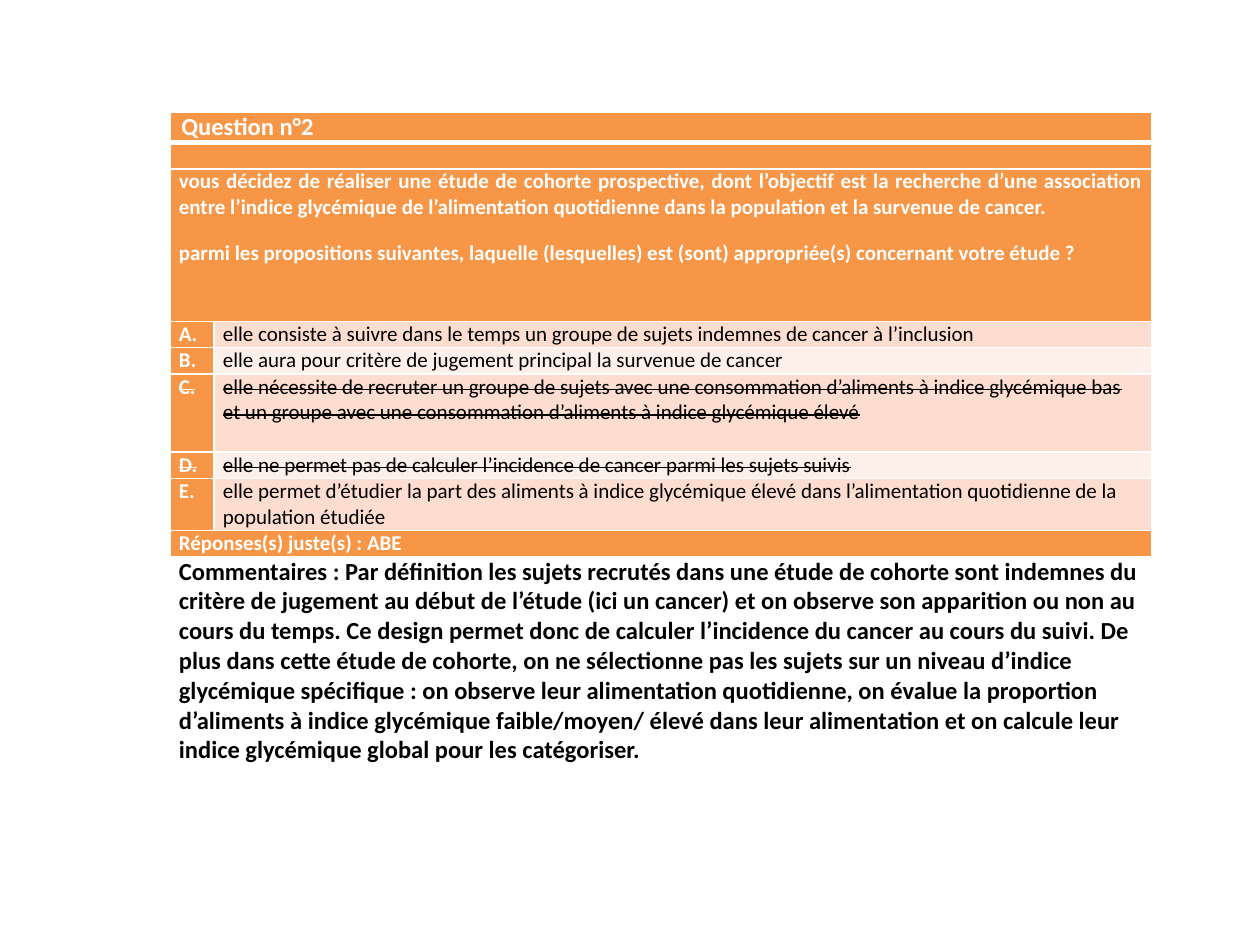
from lxml import etree
from pptx import Presentation
from pptx.dml.color import RGBColor
from pptx.enum.text import PP_ALIGN
from pptx.oxml.ns import qn
from pptx.util import Inches, Pt

LEFT, JUSTIFY = PP_ALIGN.LEFT, PP_ALIGN.JUSTIFY
WHITE = RGBColor(0xFF, 0xFF, 0xFF)
BLACK = RGBColor(0, 0, 0)
ORANGE = RGBColor(0xF7, 0x96, 0x46)
BANDS = RGBColor(0xFC, 0xDD, 0xCF), RGBColor(0xFD, 0xEF, 0xE9)

COLUMNS = [0.35, 7.44]
ROWS = [0.24, 0.21, 1.21, 0.21, 0.21, 0.62, 0.21, 0.41, 0.21, 1.24]
QUESTION = [
    "vous décidez de réaliser une étude de cohorte prospective, dont l’objectif est la recherche "
    "d’une association entre l’indice glycémique de l’alimentation quotidienne dans la population "
    "et la survenue de cancer.",
    "parmi les propositions suivantes, laquelle (lesquelles) est (sont) appropriée(s) concernant "
    "votre étude ?",
]
ANSWERS = [
    ("A.", "elle consiste à suivre dans le temps un groupe de sujets indemnes de cancer à "
     "l’inclusion", True),
    ("B.", "elle aura pour critère de jugement principal la survenue de cancer", True),
    ("C.", "elle nécessite de recruter un groupe de sujets avec une consommation d’aliments à "
     "indice glycémique bas et un groupe avec une consommation d’aliments à indice glycémique "
     "élevé", False),
    ("D.", "elle ne permet pas de calculer l’incidence de cancer parmi les sujets suivis", False),
    ("E.", "elle permet d’étudier la part des aliments à indice glycémique élevé dans "
     "l’alimentation quotidienne de la population étudiée", True),
]
COMMENT = (
    "Commentaires : Par définition les sujets recrutés dans une étude de cohorte sont indemnes du "
    "critère de jugement au début de l’étude (ici un cancer) et on observe son apparition ou non "
    "au cours du temps. Ce design permet donc de calculer l’incidence du cancer au cours du suivi. "
    "De plus dans cette étude de cohorte, on ne sélectionne pas les sujets sur un niveau d’indice "
    "glycémique spécifique : on observe leur alimentation quotidienne, on évalue la proportion "
    "d’aliments à indice glycémique faible/moyen/ élevé dans leur alimentation et on calcule leur "
    "indice glycémique global pour les catégoriser."
)


class Deck:
    font = "Calibri"
    margins = {"margin_left": Inches(0.07), "margin_right": Inches(0.07),
               "margin_top": 0, "margin_bottom": 0}

    def __init__(self, width, height):
        self.prs = Presentation()
        self.prs.slide_width, self.prs.slide_height = Inches(width), Inches(height)
        self.s = self.prs.slides.add_slide(self.prs.slide_layouts[6])

    def table(self, left, top, columns, rows):
        shape = self.s.shapes.add_table(len(rows), len(columns), Inches(left), Inches(top),
                                        Inches(sum(columns)), Inches(sum(rows)))
        tbl = shape.table
        tbl.first_row = tbl.horz_banding = False
        for column, width in zip(tbl.columns, columns):
            column.width = Inches(width)
        for row, height in zip(tbl.rows, rows):
            row.height = Inches(height)
        return tbl

    def border(self, cell, **widths):
        tcPr = cell._tc.get_or_add_tcPr()
        for side in "LRTB":
            ln = etree.SubElement(tcPr, qn(f"a:ln{side}"), w=str(Pt(widths.get(side, 1))))
            fill = etree.SubElement(ln, qn("a:solidFill"))
            etree.SubElement(fill, qn("a:srgbClr"), val=str(WHITE))

    def cell(self, cell, texts, fill=ORANGE, color=WHITE, size=12, bold=True,
             strike=False, align=LEFT):
        for name, value in self.margins.items():
            setattr(cell, name, value)
        if fill is None:
            cell.fill.background()
        else:
            cell.fill.solid()
            cell.fill.fore_color.rgb = fill
        tf = cell.text_frame
        if not texts:
            etree.SubElement(tf.paragraphs[0]._p, qn("a:endParaRPr"), sz=str(size * 100))
        for i, text in enumerate(texts):
            p = tf.add_paragraph() if i else tf.paragraphs[0]
            p.alignment = align
            if i:
                p.space_before = Pt(12)
            r = p.add_run()
            r.text = text
            font = {"name": self.font, "size": Pt(size), "bold": bold}
            for name, value in font.items():
                setattr(r.font, name, value)
            r.font.color.rgb = color
            if strike:
                r._r.get_or_add_rPr().set("strike", "sngStrike")

    def full_row(self, tbl, row, texts, **style):
        first = tbl.cell(row, 0)
        first.merge(tbl.cell(row, 1))
        self.cell(first, texts, **style)


def main():
    deck = Deck(10, 7.5)
    tbl = deck.table(1.35, 0.89, COLUMNS, ROWS)
    for i in range(len(ROWS)):
        for j in range(len(COLUMNS)):
            deck.border(tbl.cell(i, j), T=3 if i == 1 else 1, B=3 if i == 0 else 1)

    deck.full_row(tbl, 0, ["Question n°2"], size=14, align=JUSTIFY)
    tbl.cell(0, 0).margin_left = Inches(0.09)
    deck.full_row(tbl, 1, [])
    deck.full_row(tbl, 2, QUESTION, align=JUSTIFY)
    for i, (letter, answer, right) in enumerate(ANSWERS):
        deck.cell(tbl.cell(i + 3, 0), [letter], strike=not right)
        deck.cell(tbl.cell(i + 3, 1), [answer], fill=BANDS[i % 2], color=BLACK, bold=False,
                  strike=not right)
    deck.full_row(tbl, 8, ["Réponses(s) juste(s) : ABE"])
    deck.full_row(tbl, 9, [COMMENT], fill=None, color=BLACK, size=14)
    deck.prs.save("out.pptx")


if __name__ == "__main__":
    main()
